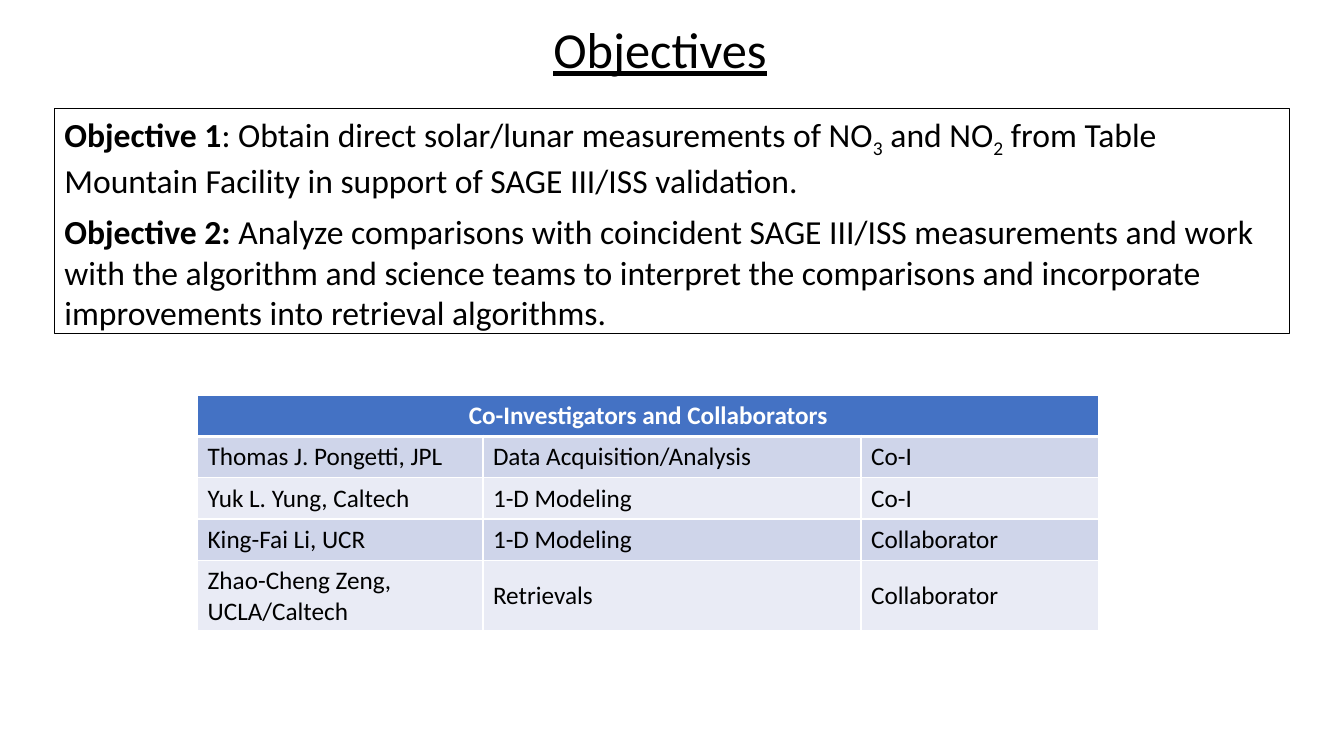
from lxml import etree
from pptx import Presentation
from pptx.dml.color import RGBColor
from pptx.enum.shapes import MSO_SHAPE
from pptx.enum.text import MSO_ANCHOR, MSO_AUTO_SIZE, PP_ALIGN
from pptx.oxml.ns import qn
from pptx.util import Inches, Pt

RECTANGLE = MSO_SHAPE.RECTANGLE
TOP, MIDDLE = MSO_ANCHOR.TOP, MSO_ANCHOR.MIDDLE
LEFT, CENTER = PP_ALIGN.LEFT, PP_ALIGN.CENTER
GROW = MSO_AUTO_SIZE.SHAPE_TO_FIT_TEXT

WIDTH, HEIGHT = 13.33, 7.5
FONT = "Calibri"
BLACK, WHITE, BLUE = "000000", "FFFFFF", "4472C4"
BANDS = ["CFD5EA", "E9EBF5"]
ROW_HEIGHT, TALL_ROW_HEIGHT = 0.41, 0.68
COLUMN_WIDTHS = [2.83, 3.75, 2.36]

# Each span is (text, style)
OBJECTIVES = [
    [("Objective 1", "bold"),
     (": Obtain direct solar/lunar measurements of NO", ""),
     ("3", "subscript"), (" and NO", ""), ("2", "subscript"),
     (" from Table Mountain Facility in support of SAGE III/ISS validation.", "")],
    [("Objective 2: ", "bold"),
     ("Analyze comparisons with coincident SAGE III/ISS measurements and work "
      "with the algorithm and science teams to interpret the comparisons and "
      "incorporate improvements into retrieval algorithms.", "")],
]
TABLE_TITLE = "Co-Investigators and Collaborators"
TEAM = [
    ("Thomas J. Pongetti, JPL", "Data Acquisition/Analysis", "Co-I"),
    ("Yuk L. Yung, Caltech", "1-D Modeling", "Co-I"),
    ("King-Fai Li, UCR", "1-D Modeling", "Collaborator"),
    ("Zhao-Cheng Zeng, UCLA/Caltech", "Retrievals", "Collaborator"),
]


def color(code):
    return RGBColor.from_string(code)


def inches(*lengths):
    return [Inches(length) for length in lengths]


def style_span(span, size, code=BLACK, bold=False):
    font = span.font
    font.name, font.size, font.bold = FONT, Pt(size), bold
    font.color.rgb = color(code)


def add_title(page, text):
    box = page.shapes.add_textbox(*inches(5.39, 0.13, 2.34, 0.71))
    frame = box.text_frame
    frame.text = text
    frame.word_wrap = False
    frame.auto_size = GROW
    span = frame.paragraphs[0].runs[0]
    style_span(span, 36)
    span.font.underline = True


def add_objectives(page, objectives):
    box = page.shapes.add_shape(RECTANGLE, *inches(0.54, 1.08, 12.25, 2.23))
    box.shadow.inherit = False
    box.fill.solid()
    box.fill.fore_color.rgb = color(WHITE)
    box.line.color.rgb = color(BLACK)
    box.line.width = Pt(0.75)
    frame = box.text_frame
    frame.word_wrap = True
    frame.auto_size = GROW
    frame.vertical_anchor = TOP
    for index, spans in enumerate(objectives):
        para = frame.add_paragraph() if index else frame.paragraphs[0]
        para.alignment = LEFT
        para.space_after = Pt(8)
        for text, style in spans:
            span = para.add_run()
            span.text = text
            style_span(span, 24, bold=style == "bold")
            if style == "subscript":
                span.font._element.set("baseline", "-25000")


def set_borders(cell, **widths):
    """Draw white cell borders; widths in points are keyed by L, R, T and B."""
    properties = cell._tc.get_or_add_tcPr()
    for side, width in widths.items():
        line = etree.SubElement(properties, qn(f"a:ln{side}"), w=str(Pt(width)))
        fill = etree.SubElement(line, qn("a:solidFill"))
        etree.SubElement(fill, qn("a:srgbClr"), val=WHITE)


def fill_cell(cell, text, fill, code=BLACK, bold=False, align=LEFT):
    cell.fill.solid()
    cell.fill.fore_color.rgb = color(fill)
    cell.vertical_anchor = MIDDLE
    cell.text = text
    para = cell.text_frame.paragraphs[0]
    para.alignment = align
    for span in para.runs:
        style_span(span, 18, code, bold)


def add_team_table(page, title, team):
    heights = [ROW_HEIGHT] * len(team) + [TALL_ROW_HEIGHT]
    table = page.shapes.add_table(
        len(heights), len(COLUMN_WIDTHS),
        *inches(1.96, 3.92, sum(COLUMN_WIDTHS), sum(heights))).table
    for column, width in zip(table.columns, COLUMN_WIDTHS):
        column.width = Inches(width)
    for row, height in zip(table.rows, heights):
        row.height = Inches(height)

    for index, row in enumerate(table.rows):
        for cell in row.cells:
            set_borders(cell, L=1, R=1, T=3 if index == 1 else 1,
                        B=1 if index else 3)

    header = table.cell(0, 0)
    header.merge(table.cell(0, len(COLUMN_WIDTHS) - 1))
    fill_cell(header, title, BLUE, WHITE, bold=True, align=CENTER)
    for index, member in enumerate(team):
        for column, text in enumerate(member):
            fill_cell(table.cell(index + 1, column), text, BANDS[index % 2])


def main():
    deck = Presentation()
    deck.slide_width, deck.slide_height = inches(WIDTH, HEIGHT)
    page = deck.slides.add_slide(deck.slide_layouts[6])
    add_objectives(page, OBJECTIVES)
    add_title(page, "Objectives")
    add_team_table(page, TABLE_TITLE, TEAM)
    deck.save("out.pptx")


if __name__ == "__main__":
    main()
